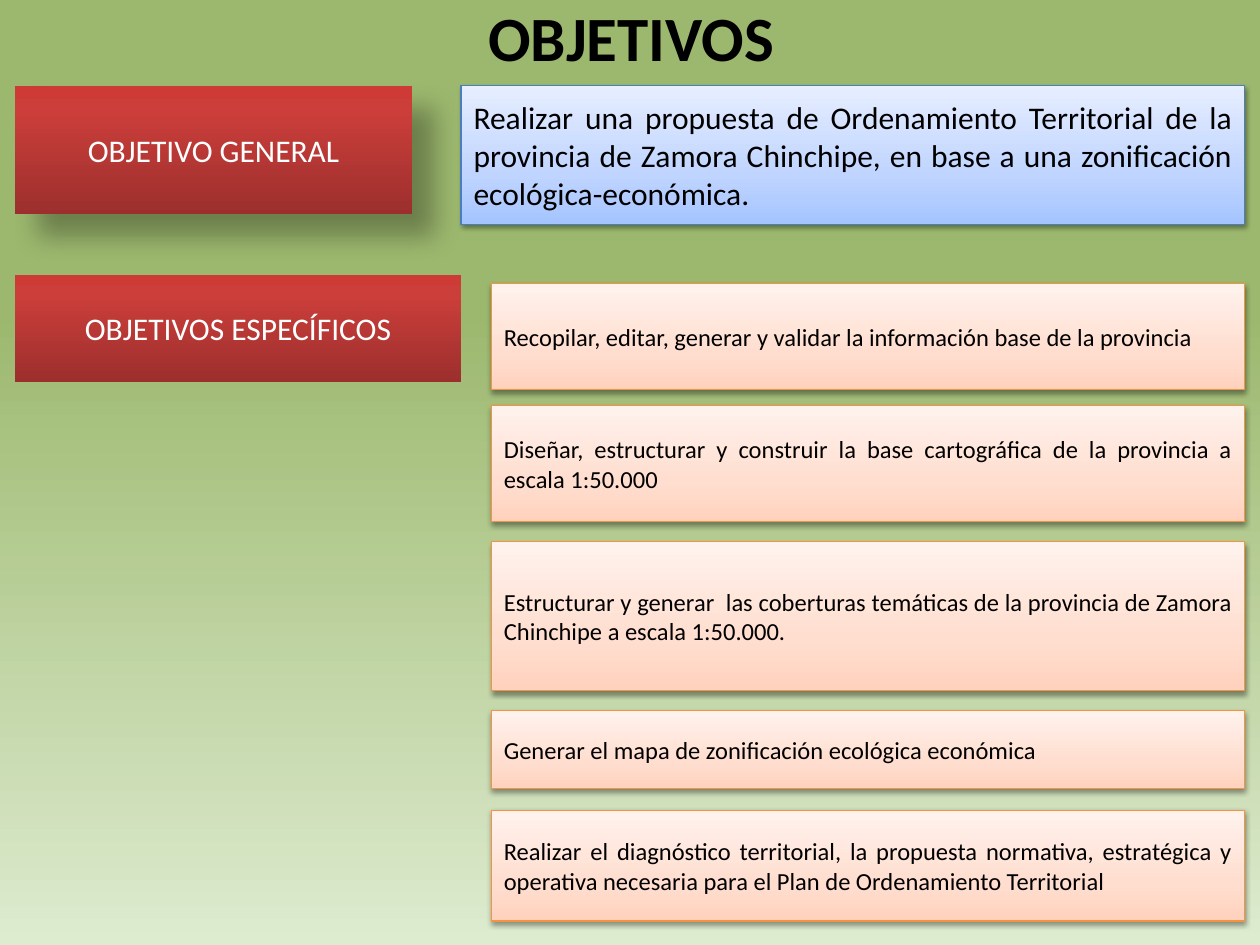
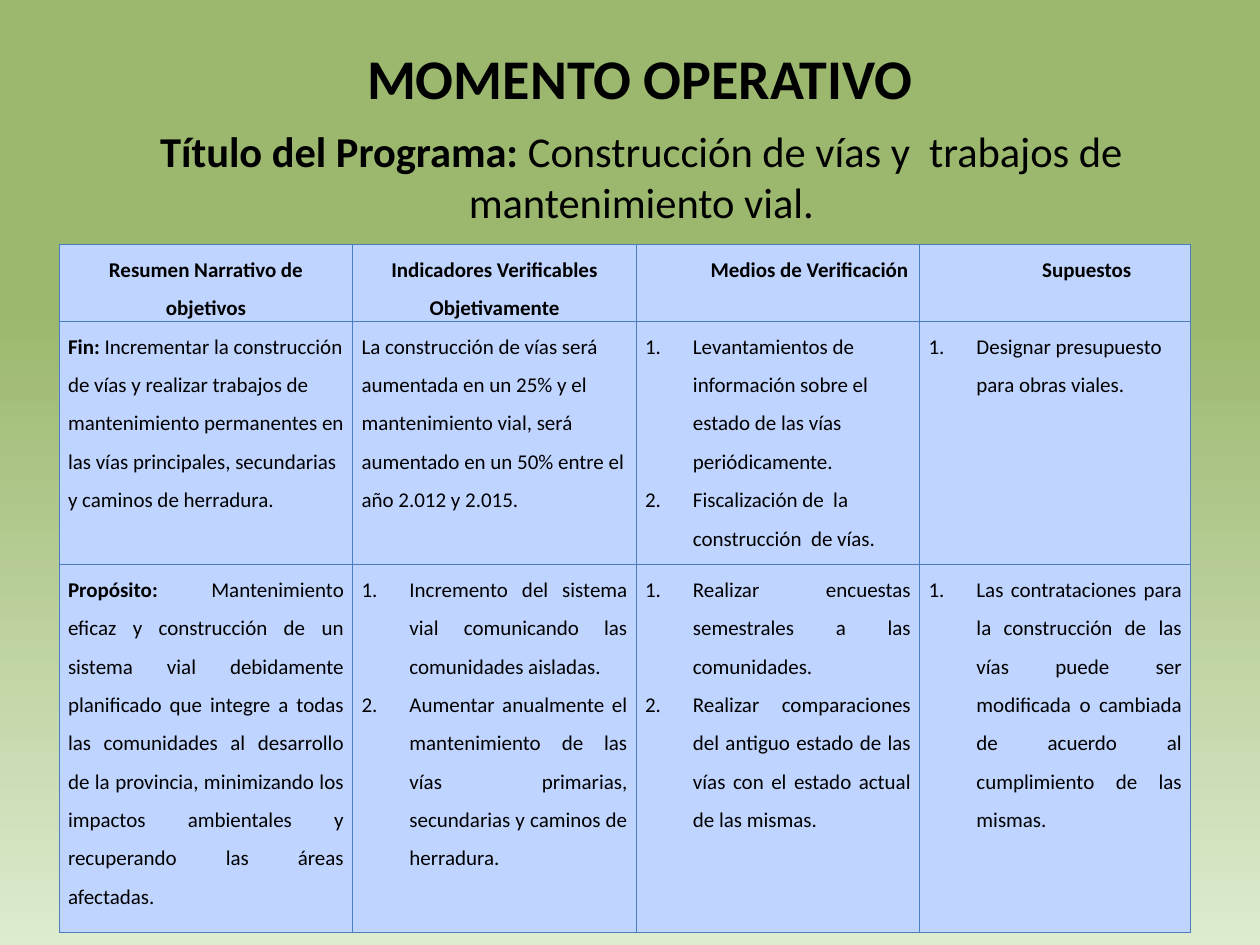
"""Build the objectives slide and the operational programme slide."""
import copy
from dataclasses import dataclass

import lxml.etree
import pptx
import pptx.dml.color
import pptx.enum.shapes
import pptx.enum.text
import pptx.oxml.ns
import pptx.util

Inches = pptx.util.Inches
Pt = pptx.util.Pt
qn = pptx.oxml.ns.qn
Align = pptx.enum.text.PP_ALIGN
Anchor = pptx.enum.text.MSO_ANCHOR

FONT = "Calibri"
COLORS = {
    "text": "000000",
    "label_text": "FFFFFF",
    "specific_line": "F69240",
    "blue_line": "4B7EBC",
    "cell": "BFD4FF",
    "shadow": "000000",
}
GRADIENTS = {
    "background": [(33, "9CB86E"), (100, "DDEBCF")],
    "specific": [(0, "FFD2BD"), (35, "FFDED0"), (100, "FFF2ED")],
    "general": [(0, "A4C4FF"), (35, "BFD4FF"), (100, "E6EEFF")],
    "label": [(0, "9C2F2D"), (80, "CB3E3A"), (100, "CE3B37")],
}


@dataclass(frozen=True)
class Shadow:
    opacity: int
    blur: float
    distance: float
    angle: int


SOFT = Shadow(38, 3.1, 1.6, 90)
DEEP = Shadow(30, 15, 18, 45)


@dataclass(frozen=True)
class Panel:
    text: str
    left: float
    top: float
    width: float
    height: float
    gradient: str
    size: int = 18
    line: str | None = None
    shadow: Shadow | None = None
    align: Align = Align.JUSTIFY
    text_color: str = "text"


@dataclass(frozen=True)
class Title:
    body: str
    left: float
    top: float
    height: float
    size: float
    lead: str = ""
    bold: bool = True


@dataclass(frozen=True)
class Cell:
    paragraphs: tuple[str, ...]
    align: Align = Align.LEFT
    lead: str = ""
    bold: bool = False
    numbered: bool = False
    indent: float = 0


SPECIFIC_GOALS = [
    (2.25, 0.84, "Recopilar, editar, generar y validar la información base de la provincia"),
    (3.22, 0.92, "Diseñar, estructurar y construir la base cartográfica de la provincia a escala 1:50.000"),
    (4.3, 1.18, "Estructurar y generar  las coberturas temáticas de la provincia de Zamora "
                "Chinchipe a escala 1:50.000."),
    (5.64, 0.62, "Generar el mapa de zonificación ecológica económica"),
    (6.43, 0.88, "Realizar el diagnóstico territorial, la propuesta normativa, estratégica y operativa "
                 "necesaria para el Plan de Ordenamiento Territorial"),
]
PANELS = [
    Panel(text, 3.9, top, 5.98, height, "specific", 14, "specific_line", SOFT)
    for top, height, text in SPECIFIC_GOALS
] + [
    Panel("Realizar una propuesta de Ordenamiento Territorial de la provincia de Zamora Chinchipe, "
          "en base a una zonificación ecológica-económica.",
          3.66, 0.68, 6.22, 1.1, "general", line="blue_line", shadow=SOFT),
    Panel("OBJETIVO GENERAL", 0.12, 0.68, 3.15, 1.02, "label", shadow=DEEP,
          align=Align.CENTER, text_color="label_text"),
    Panel("OBJETIVOS ESPECÍFICOS", 0.12, 2.18, 3.54, 0.85, "label",
          align=Align.CENTER, text_color="label_text"),
]


def heading(*paragraphs: str, indent: float = 0) -> Cell:
    """Describe a header cell."""
    return Cell(paragraphs, Align.CENTER, bold=True, indent=indent)


def steps(*paragraphs: str, align: Align = Align.JUSTIFY) -> Cell:
    """Describe a cell holding a numbered list."""
    return Cell(paragraphs, align, numbered=True)


COLUMN_WIDTHS = [2.33, 2.25, 2.25, 2.15]
ROW_HEIGHTS = [0.61, 1.93, 2.92]
MATRIX = [
    [
        heading("Resumen Narrativo de objetivos"),
        heading("Indicadores Verificables", "Objetivamente"),
        heading("Medios de Verificación", indent=0.5),
        heading("Supuestos", indent=0.5),
    ],
    [
        Cell(("Incrementar la construcción de vías y realizar trabajos de mantenimiento permanentes en "
              "las vías principales, secundarias y caminos de herradura.",), lead="Fin: "),
        Cell(("La construcción de vías será aumentada en un 25% y el mantenimiento vial, será aumentado "
              "en un 50% entre el año 2.012 y 2.015.",)),
        steps("Levantamientos de información sobre el estado de las vías periódicamente.",
              "Fiscalización de  la construcción  de vías.", align=Align.LEFT),
        steps("Designar presupuesto para obras viales.", align=Align.LEFT),
    ],
    [
        Cell(("Mantenimiento eficaz y construcción de un sistema vial debidamente planificado que integre "
              "a todas las comunidades al desarrollo de la provincia, minimizando los impactos ambientales "
              "y recuperando las áreas afectadas.",), Align.JUSTIFY, lead="Propósito: "),
        steps("Incremento del sistema vial comunicando las comunidades aisladas.",
              "Aumentar anualmente el mantenimiento de las vías primarias, secundarias y caminos de herradura."),
        steps("Realizar encuestas semestrales a las comunidades.",
              "Realizar comparaciones del antiguo estado de las vías con el estado actual de las mismas."),
        steps("Las contrataciones para la construcción de las vías puede ser modificada o cambiada de "
              "acuerdo al cumplimiento de las mismas."),
    ],
]


def rgb(name: str) -> pptx.dml.color.RGBColor:
    """Look up a named colour."""
    return pptx.dml.color.RGBColor.from_string(COLORS[name])


def add_color(parent, name: str):
    """Append a colour element and return it."""
    return lxml.etree.SubElement(parent, qn("a:srgbClr"), val=COLORS[name])


def paint_gradient(fill, owner, name: str, angle: int) -> None:
    """Fill with a named gradient at a counter-clockwise angle."""
    fill.gradient()
    fill.gradient_angle = angle
    stop_list = next(owner.iter(qn("a:gsLst")))
    for _ in GRADIENTS[name][2:]:
        stop_list.append(copy.deepcopy(stop_list[-1]))
    for stop, (percent, color) in zip(fill.gradient_stops, GRADIENTS[name]):
        stop.position = percent / 100
        stop.color.rgb = pptx.dml.color.RGBColor.from_string(color)


def cast_shadow(shape, shadow: Shadow) -> None:
    """Add an outer shadow to a shape."""
    effects = next(shape.element.iter(qn("a:effectLst")))
    outer = lxml.etree.SubElement(
        effects, qn("a:outerShdw"), blurRad=str(Pt(shadow.blur)), dist=str(Pt(shadow.distance)),
        dir=str(shadow.angle * 60000), algn="tl", rotWithShape="0")
    lxml.etree.SubElement(add_color(outer, "shadow"), qn("a:alpha"), val=str(shadow.opacity * 1000))


def write(paragraph, body: str, size: float, align: Align, bold: bool = False,
          lead: str = "", color: str = "text") -> None:
    """Write a paragraph, with an optional bold lead-in."""
    paragraph.alignment = align
    font = paragraph.font
    font.name, font.size = FONT, Pt(size)
    font.color.rgb = rgb(color)
    if lead:
        for text, strong in ((lead, True), (body, bold)):
            run = paragraph.add_run()
            run.text, run.font.bold = text, strong
    else:
        paragraph.text, font.bold = body, bold


def add_title(slide, title: Title) -> None:
    """Draw a centred title."""
    box = slide.shapes.add_textbox(Inches(title.left), Inches(title.top), Inches(9), Inches(title.height))
    frame = box.text_frame
    frame.word_wrap = True
    frame.vertical_anchor = Anchor.MIDDLE
    write(frame.paragraphs[0], title.body, title.size, Align.CENTER, title.bold, title.lead)


def add_panel(slide, panel: Panel) -> None:
    """Draw a gradient rectangle with its text."""
    shape = slide.shapes.add_shape(
        pptx.enum.shapes.MSO_SHAPE.RECTANGLE, Inches(panel.left), Inches(panel.top),
        Inches(panel.width), Inches(panel.height))
    paint_gradient(shape.fill, shape.element, panel.gradient, 90)
    if panel.line:
        shape.line.color.rgb = rgb(panel.line)
        shape.line.width = Pt(0.75)
    else:
        shape.line.fill.background()
    shape.shadow.inherit = False
    if panel.shadow:
        cast_shadow(shape, panel.shadow)
    frame = shape.text_frame
    frame.word_wrap = True
    frame.vertical_anchor = Anchor.MIDDLE
    write(frame.paragraphs[0], panel.text, panel.size, panel.align, color=panel.text_color)


def fill_cell(target, cell: Cell) -> None:
    """Write and style one table cell."""
    target.margin_left = target.margin_right = Inches(0.07)
    target.margin_top = target.margin_bottom = 0
    frame = target.text_frame
    for index, text in enumerate(cell.paragraphs):
        paragraph = frame.add_paragraph() if index else frame.paragraphs[0]
        paragraph.line_spacing = 1.5
        properties = paragraph._p.get_or_add_pPr()
        if cell.numbered:
            properties.set("marL", str(Inches(0.38)))
            properties.set("indent", str(-Inches(0.38)))
            lxml.etree.SubElement(properties, qn("a:buFont"), typeface="+mj-lt")
            lxml.etree.SubElement(properties, qn("a:buAutoNum"), type="arabicPeriod")
        elif cell.indent:
            properties.set("marL", str(Inches(cell.indent)))
        write(paragraph, text, 12, cell.align, cell.bold, cell.lead)
    borders = target._tc.get_or_add_tcPr()
    for side in ("a:lnL", "a:lnR", "a:lnT", "a:lnB"):
        border = lxml.etree.SubElement(borders, qn(side), w=str(Pt(0.75)))
        add_color(lxml.etree.SubElement(border, qn("a:solidFill")), "blue_line")
    target.fill.solid()
    target.fill.fore_color.rgb = rgb("cell")


def add_matrix(slide) -> None:
    """Draw the programme table."""
    table = slide.shapes.add_table(
        len(ROW_HEIGHTS), len(COLUMN_WIDTHS), Inches(0.47), Inches(1.94),
        Inches(sum(COLUMN_WIDTHS)), Inches(sum(ROW_HEIGHTS))).table
    table.first_row = table.horz_banding = False
    for column, width in zip(table.columns, COLUMN_WIDTHS):
        column.width = Inches(width)
    for row, height, cells in zip(table.rows, ROW_HEIGHTS, MATRIX):
        row.height = Inches(height)
        for target, cell in zip(row.cells, cells):
            fill_cell(target, cell)


def add_slide(deck, *titles: Title):
    """Add a slide with the shared background and its titles."""
    slide = deck.slides.add_slide(deck.slide_layouts[6])
    paint_gradient(slide.background.fill, slide.element, "background", 270)
    for title in titles:
        add_title(slide, title)
    return slide


def main() -> None:
    """Build and save the deck."""
    deck = pptx.Presentation()
    deck.slide_width, deck.slide_height = Inches(10), Inches(7.5)
    objectives = add_slide(deck, Title("OBJETIVOS", 0.51, -0.34, 1.25, 36))
    for panel in PANELS:
        add_panel(objectives, panel)
    programme = add_slide(
        deck,
        Title("MOMENTO OPERATIVO", 0.58, 0.1, 1.02, 32),
        Title("Construcción de vías y  trabajos de mantenimiento vial.", 0.59, 0.9, 1, 24.3,
              lead="Título del Programa: ", bold=False))
    add_matrix(programme)
    deck.save("out.pptx")


if __name__ == "__main__":
    main()
